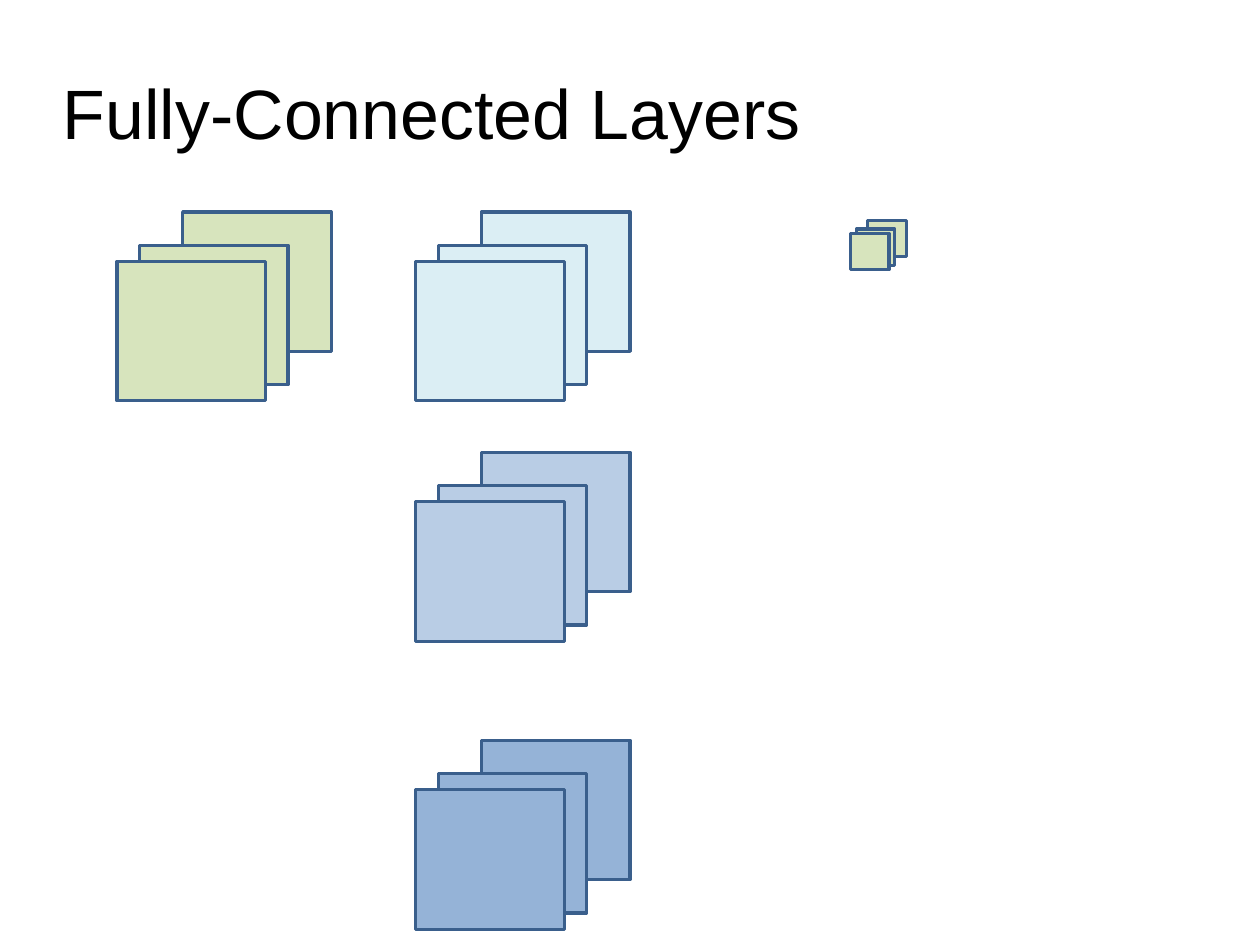
from dataclasses import dataclass

from pptx import Presentation
from pptx.dml.color import RGBColor
from pptx.enum.shapes import MSO_SHAPE as Preset
from pptx.enum.text import MSO_ANCHOR as Anchor, MSO_AUTO_SIZE as AutoSize, PP_ALIGN as Align
from pptx.shapes.autoshape import Shape
from pptx.slide import Slide
from pptx.util import Cm, Pt

BLACK = RGBColor(0x00, 0x00, 0x00)
OUTLINE = RGBColor(0x3A, 0x5F, 0x8C)
GREEN = RGBColor(0xD7, 0xE4, 0xBD)
PALE_BLUE = RGBColor(0xDB, 0xEE, 0xF4)
LIGHT_BLUE = RGBColor(0xB9, 0xCD, 0xE5)
MID_BLUE = RGBColor(0x95, 0xB3, 0xD7)

MAP_WIDTH, MAP_HEIGHT = 3.3, 3.1
MAP_OFFSETS = ((1.46, 0), (0.5, 0.74), (0, 1.1))


@dataclass(frozen=True)
class LayerStack:
    left: float
    top: float
    fill: RGBColor
    scale: float = 1


STACKS = (
    LayerStack(2.6, 4.71, GREEN),
    LayerStack(9.24, 4.71, PALE_BLUE),
    LayerStack(9.24, 10.05, LIGHT_BLUE),
    LayerStack(9.24, 16.45, MID_BLUE),
    LayerStack(18.9, 4.9, GREEN, 0.26),
)


def format_title(title: Shape, text: str) -> None:
    title.left, title.top = Cm(1.4), Cm(0.84)
    title.width, title.height = Cm(25.2), Cm(3.5)
    frame = title.text_frame
    frame.text = text
    frame.auto_size = AutoSize.NONE
    frame.vertical_anchor = Anchor.MIDDLE
    frame.margin_left = frame.margin_right = frame.margin_top = frame.margin_bottom = 0
    para = frame.paragraphs[0]
    para.alignment = Align.LEFT
    para.line_spacing = 0.9
    para.font.name = "Arial"
    para.font.size = Pt(44)
    para.font.color.rgb = BLACK


def draw_stack(page: Slide, stack: LayerStack) -> None:
    group = page.shapes.add_group_shape()
    for across, down in MAP_OFFSETS:
        feature_map = group.shapes.add_shape(
            Preset.RECTANGLE,
            Cm(stack.left + across * stack.scale),
            Cm(stack.top + down * stack.scale),
            Cm(MAP_WIDTH * stack.scale),
            Cm(MAP_HEIGHT * stack.scale),
        )
        feature_map.shadow.inherit = False
        feature_map.fill.solid()
        feature_map.fill.fore_color.rgb = stack.fill
        feature_map.line.color.rgb = OUTLINE
        feature_map.line.width = Pt(2)


def main() -> None:
    deck = Presentation()
    deck.slide_width, deck.slide_height = Cm(28), Cm(21)
    page = deck.slides.add_slide(deck.slide_layouts.get_by_name("Title Only"))
    format_title(page.shapes.title, "Fully-Connected Layers")
    for stack in STACKS:
        draw_stack(page, stack)
    deck.save("out.pptx")


if __name__ == "__main__":
    main()
